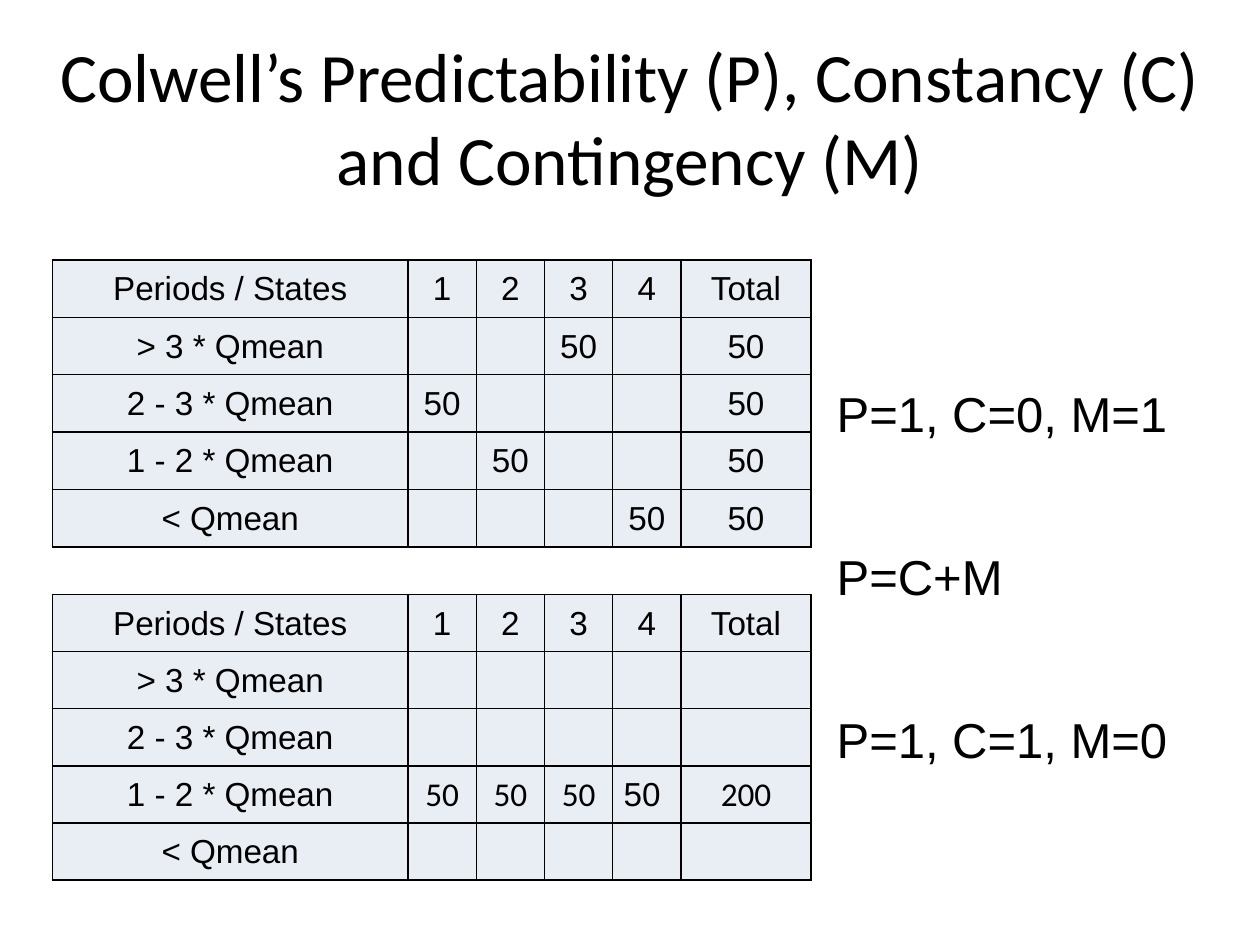
from dataclasses import dataclass

from lxml.etree import SubElement
from pptx import Presentation
from pptx.dml.color import RGBColor
from pptx.enum.text import MSO_ANCHOR, PP_ALIGN
from pptx.oxml.ns import qn
from pptx.util import Pt


@dataclass(frozen=True)
class Theme:
    ink: str = "000000"
    cell_fill: str = "E9EDF4"
    heading_font: str = "Calibri"
    body_font: str = "Arial"
    title_size: float = 39.6
    formula_size: float = 28
    cell_size: float = 19
    border_width: float = 1


class SlideBuilder:
    def __init__(self, page, theme):
        self.page = page
        self.theme = theme

    def style(self, para, size, font):
        para.font.size = Pt(size)
        para.font.name = font
        para.font.color.rgb = RGBColor.from_string(self.theme.ink)

    def text(self, content, left, top, width, height, size, font,
             align=PP_ALIGN.LEFT, anchor=MSO_ANCHOR.TOP):
        box = self.page.shapes.add_textbox(Pt(left), Pt(top), Pt(width), Pt(height))
        frame = box.text_frame
        frame.word_wrap = True
        frame.vertical_anchor = anchor
        para = frame.paragraphs[0]
        para.text = content
        para.alignment = align
        self.style(para, size, font)

    def border(self, cell):
        properties = cell._tc.get_or_add_tcPr()
        for index, side in enumerate(("a:lnL", "a:lnR", "a:lnT", "a:lnB")):
            line = properties.makeelement(
                qn(side), {"w": str(Pt(self.theme.border_width))})
            fill = SubElement(line, qn("a:solidFill"))
            SubElement(fill, qn("a:srgbClr"), val=self.theme.ink)
            properties.insert(index, line)

    def cell(self, cell, content, font):
        cell.fill.solid()
        cell.fill.fore_color.rgb = RGBColor.from_string(self.theme.cell_fill)
        cell.vertical_anchor = MSO_ANCHOR.MIDDLE
        cell.margin_left = cell.margin_right = cell.margin_top = Pt(0.7)
        cell.margin_bottom = Pt(0)
        para = cell.text_frame.paragraphs[0]
        para.text = content
        para.alignment = PP_ALIGN.CENTER
        self.style(para, self.theme.cell_size, font)
        self.border(cell)

    def table(self, rows, left, top, widths, row_height, heading_cells=()):
        frame = self.page.shapes.add_table(
            len(rows), len(widths), Pt(left), Pt(top),
            Pt(sum(widths)), Pt(row_height * len(rows)))
        grid = frame.table
        grid.first_row = grid.horz_banding = False
        for column, width in zip(grid.columns, widths):
            column.width = Pt(width)
        for r, row in enumerate(rows):
            grid.rows[r].height = Pt(row_height)
            for c, content in enumerate(row):
                font = (self.theme.heading_font if (r, c) in heading_cells
                        else self.theme.body_font)
                self.cell(grid.cell(r, c), content, font)


HEADER = ("Periods / States", "1", "2", "3", "4", "Total")
STATES = ("> 3 * Qmean", "2 - 3 * Qmean", "1 - 2 * Qmean", "< Qmean")
COLUMN_WIDTHS = (203.2, 39, 39, 39, 39, 74.4)

# Counts per state: periods 1 to 4, then the total
CONTINGENT = (
    ("", "", "50", "", "50"),
    ("50", "", "", "", "50"),
    ("", "50", "", "", "50"),
    ("", "", "", "50", "50"),
)
EMPTY = ("",) * 5
CONSTANT = (EMPTY, EMPTY, ("50", "50", "50", "50 ", "200"), EMPTY)


def with_labels(counts):
    return [HEADER] + [(state, *row) for state, row in zip(STATES, counts)]


def main():
    deck = Presentation()
    deck.slide_width, deck.slide_height = Pt(720), Pt(540)
    theme = Theme()
    slide = SlideBuilder(deck.slides.add_slide(deck.slide_layouts[6]), theme)

    # Title
    slide.text("Colwell’s Predictability (P), Constancy (C) and Contingency (M)",
               0, 21.6, 720, 90, theme.title_size, theme.heading_font,
               PP_ALIGN.CENTER, MSO_ANCHOR.MIDDLE)

    # Frequency tables
    slide.table(with_labels(CONTINGENT), 30, 148.5, COLUMN_WIDTHS, 32.8)
    slide.table(with_labels(CONSTANT), 30, 339.8, COLUMN_WIDTHS, 32.6,
                heading_cells={(3, 1), (3, 2), (3, 3), (3, 5)})

    # Formulas, evenly spaced down the right side
    for index, formula in enumerate(("P=1, C=0, M=1", "P=C+M", "P=1, C=1, M=0")):
        slide.text(formula, 471, 215.4 + 93.2 * index, 226, 41,
                   theme.formula_size, theme.body_font)

    deck.save("out.pptx")


if __name__ == "__main__":
    main()
